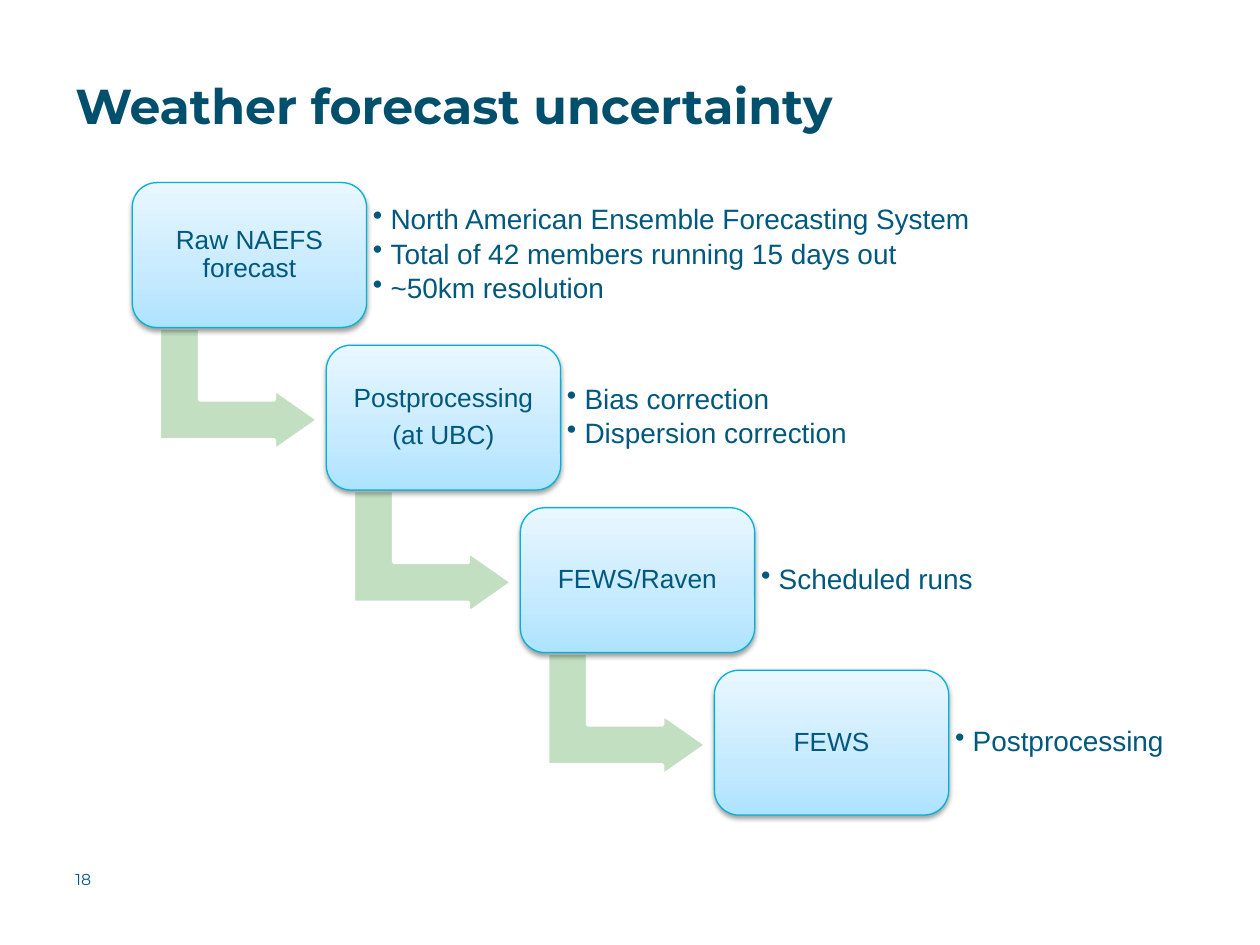
"""Build the weather forecast uncertainty slide: a staircase of four steps."""
import copy
import dataclasses

import lxml.etree
import pptx
import pptx.dml.color
import pptx.enum.shapes
import pptx.enum.text
import pptx.oxml.ns
import pptx.util

SHAPES = pptx.enum.shapes.MSO_SHAPE
ALIGN = pptx.enum.text.PP_ALIGN
ANCHOR = pptx.enum.text.MSO_ANCHOR
SLIDE_WIDTH = pptx.util.Inches(10)
SLIDE_HEIGHT = pptx.util.Inches(7.5)
NAVY, BLUE, CYAN, GREEN, WHITE = "004F6C", "00587E", "00B1DA", "C2DFC1", "FFFFFF"
GRADIENT = [(0, "ADE3FF"), (0.35, "C5EAFF"), (1, "E9F7FF")]
BULLET_INDENT = pptx.util.Inches(0.14)


@dataclasses.dataclass(frozen=True)
class Area:
    """A rectangle in percent of the slide's width and height."""

    left: float
    top: float
    width: float
    height: float

    def shifted(self, across: float, down: float) -> "Area":
        """Return the same area moved by the given percentages."""
        return dataclasses.replace(self, left=self.left + across, top=self.top + down)

    def emu(self) -> list[int]:
        """Return left, top, width and height as lengths."""
        sides = [SLIDE_WIDTH, SLIDE_HEIGHT] * 2
        return [round(share * side / 100) for share, side in zip(dataclasses.astuple(self), sides)]


@dataclasses.dataclass(frozen=True)
class Step:
    """One stage of the process with its remarks."""

    label: list[str]
    remarks: list[str]
    remarks_width: float


STEP_ACROSS, STEP_DOWN = 15.4, 17.2
STAGE_AREA = Area(10.5, 19.33, 18.6, 15.33)
ARROW_AREA = Area(14.1, 32.8, 9.7, 16.8)
REMARKS_LEFT, REMARKS_TOP, REMARKS_HEIGHT = 29.1, 20.8, 12.4

STEPS = [
    Step(["Raw NAEFS forecast"],
         ["North American Ensemble Forecasting System",
          "Total of 42 members running 15 days out",
          "~50km resolution"], 59.8),
    Step(["Postprocessing", "(at UBC)"], ["Bias correction", "Dispersion correction"], 36.4),
    Step(["FEWS/Raven"], ["Scheduled runs"], 28.9),
    Step(["FEWS"], ["Postprocessing"], 20),
]

TITLE_FONT = {"name": "Montserrat", "size": pptx.util.Pt(28), "bold": True}
NUMBER_FONT = {"name": "Montserrat", "size": pptx.util.Pt(9)}
STAGE_FONT = {"name": "Arial", "size": pptx.util.Pt(15)}
REMARK_FONT = {"name": "Arial", "size": pptx.util.Pt(16)}
TITLE_PARAGRAPH = {"line_spacing": pptx.util.Pt(28)}
STAGE_PARAGRAPH = {"alignment": ALIGN.CENTER, "line_spacing": 0.9,
                   "space_after": pptx.util.Pt(5.25)}
REMARK_PARAGRAPH = {"line_spacing": 0.9, "space_after": pptx.util.Pt(2.4)}


def colour(value: str) -> pptx.dml.color.RGBColor:
    """Turn a hex string into a colour."""
    return pptx.dml.color.RGBColor.from_string(value)


def apply(target, values: dict) -> None:
    """Set every attribute in values on the target."""
    for key, value in values.items():
        setattr(target, key, value)


def add_element(parent, tag: str, **attributes: str):
    """Append a DrawingML element to the parent."""
    return lxml.etree.SubElement(parent, pptx.oxml.ns.qn(tag), attributes)


def write(frame, lines: list[str], font: dict, ink: str, paragraph_format: dict,
          inset: float | None = None, bulleted: bool = False) -> None:
    """Fill a text frame with one paragraph per line."""
    apply(frame, {"word_wrap": True, "vertical_anchor": ANCHOR.MIDDLE})
    if inset is not None:
        sides = ("left", "top", "right", "bottom")
        apply(frame, {f"margin_{side}": pptx.util.Inches(inset) for side in sides})
    for index, line in enumerate(lines):
        paragraph = frame.add_paragraph() if index else frame.paragraphs[0]
        if bulleted:
            properties = paragraph._p.get_or_add_pPr()
            properties.set("marL", str(BULLET_INDENT))
            properties.set("indent", str(-BULLET_INDENT))
            add_element(properties, "a:buChar", char="•")
        apply(paragraph, paragraph_format)
        run = paragraph.add_run()
        run.text = line
        apply(run.font, font)
        run.font.color.rgb = colour(ink)


def add_text(slide, area: Area, lines: list[str], font: dict, ink: str,
             paragraph_format: dict, **options) -> None:
    """Add a text box over the area."""
    box = slide.shapes.add_textbox(*area.emu())
    write(box.text_frame, lines, font, ink, paragraph_format, **options)


def add_outlined(slide, kind, area: Area, line_colour: str, line_width: float):
    """Add a preset shape with a coloured outline and no inherited shadow."""
    shape = slide.shapes.add_shape(kind, *area.emu())
    shape.shadow.inherit = False
    shape.line.color.rgb = colour(line_colour)
    shape.line.width = pptx.util.Pt(line_width)
    return shape


def add_arrow(slide, area: Area) -> None:
    """Add the bent arrow that leads down to the next stage."""
    arrow = add_outlined(slide, SHAPES.BENT_UP_ARROW, area, WHITE, 2)
    arrow.rotation = 90
    arrow.fill.solid()
    arrow.fill.fore_color.rgb = colour(GREEN)
    for index, value in enumerate([0.328, 0.25, 0.358]):
        arrow.adjustments[index] = value


def add_stage(slide, area: Area, label: list[str]) -> None:
    """Add a rounded stage box with its gradient, shadow and label."""
    stage = add_outlined(slide, SHAPES.ROUNDED_RECTANGLE, area, CYAN, 0.75)
    stage.adjustments[0] = 0.17
    stage.fill.gradient()
    stage.fill.gradient_angle = 90
    properties = stage._element.spPr
    stops = properties.find(".//" + pptx.oxml.ns.qn("a:gsLst"))
    stops.append(copy.deepcopy(stops[-1]))
    for stop, (position, tint) in zip(stage.fill.gradient_stops, GRADIENT):
        stop.position = position
        stop.color.rgb = colour(tint)
    effects = properties.find(pptx.oxml.ns.qn("a:effectLst"))
    shadow = add_element(effects, "a:outerShdw", blurRad=str(pptx.util.Pt(3.1)),
                         dist=str(pptx.util.Pt(1.6)), dir="5400000", rotWithShape="0")
    shade = add_element(shadow, "a:srgbClr", val="000000")
    add_element(shade, "a:alpha", val="38000")
    write(stage.text_frame, label, STAGE_FONT, BLUE, STAGE_PARAGRAPH, inset=0.12)


def main() -> None:
    """Build and save the slide."""
    presentation = pptx.Presentation()
    apply(presentation, {"slide_width": SLIDE_WIDTH, "slide_height": SLIDE_HEIGHT})
    slide = presentation.slides.add_slide(presentation.slide_layouts[6])
    add_text(slide, Area(5, 5.73, 90.3, 11.73), ["Weather forecast uncertainty"],
             TITLE_FONT, NAVY, TITLE_PARAGRAPH)
    add_text(slide, Area(5, 90.4, 3.9, 5.33), ["18"], NUMBER_FONT, BLUE, {})
    for index, step in enumerate(STEPS):
        offset = index * STEP_ACROSS, index * STEP_DOWN
        if index < len(STEPS) - 1:
            add_arrow(slide, ARROW_AREA.shifted(*offset))
        add_stage(slide, STAGE_AREA.shifted(*offset), step.label)
        remarks = Area(REMARKS_LEFT, REMARKS_TOP, step.remarks_width, REMARKS_HEIGHT)
        add_text(slide, remarks.shifted(*offset), step.remarks, REMARK_FONT, BLUE,
                 REMARK_PARAGRAPH, inset=0.05, bulleted=True)
    presentation.save("out.pptx")


if __name__ == "__main__":
    main()
